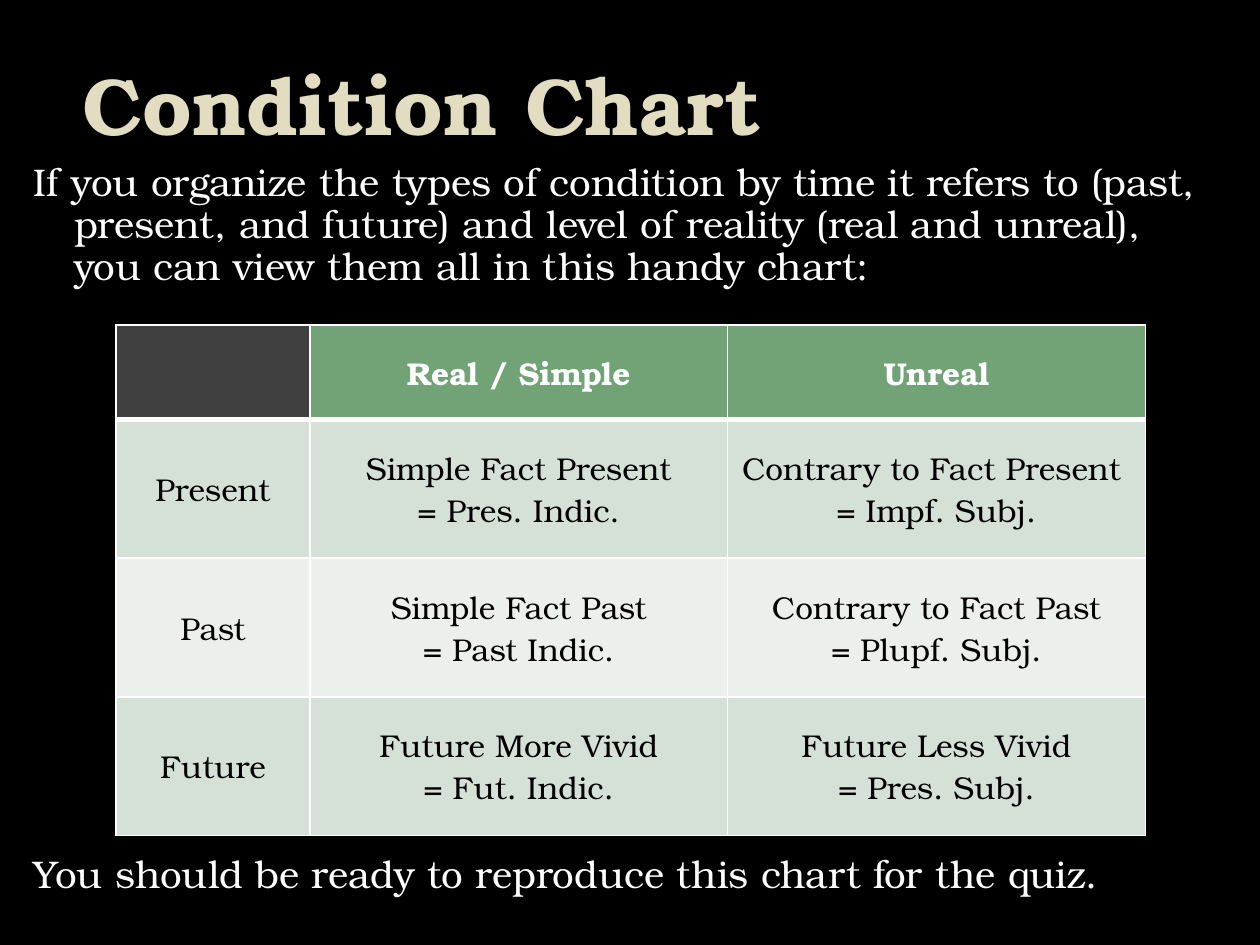
from pptx import Presentation
from pptx.dml.color import RGBColor
from pptx.enum.text import MSO_ANCHOR, PP_ALIGN
from pptx.oxml import parse_xml
from pptx.oxml.ns import nsdecls
from pptx.util import Inches, Pt

FACE = "TeX Gyre Bonum"
TITLE = "Condition Chart"
INTRO = ("If you organize the types of condition by time it refers to (past, "
         "present, and future) and level of reality (real and unreal), "
         "you can view them all in this handy chart:")
CLOSE = "You should be ready to reproduce this chart for the quiz."
ROWS = [
    ["", "Real / Simple", "Unreal"],
    ["Present", "Simple Fact Present\n= Pres. Indic.", "Contrary to Fact Present\u0020\n= Impf. Subj."],
    ["Past", "Simple Fact Past\n= Past Indic.", "Contrary to Fact Past\n= Plupf. Subj."],
    ["Future", "Future More Vivid\n= Fut. Indic.", "Future Less Vivid\n= Pres. Subj."],
]
WIDTHS = [1.54, 3.315, 3.315]
HEIGHTS = [0.75, 1.1, 1.1, 1.1]
BANDS = ["EBF0EC", "D5E0D6"]


def color(code):
    return RGBColor.from_string(code)


def style(para, size, code, bold=False):
    font = para.font
    font.name, font.size, font.bold = FACE, Pt(size), bold
    font.color.rgb = color(code)


def add_text(box, text, size, code, indent, hang=0, bold=False):
    shape = slide.shapes.add_textbox(*map(Inches, box))
    frame = shape.text_frame
    frame.word_wrap = True
    para = frame.paragraphs[0]
    para.text = text
    props = para._p.get_or_add_pPr()
    props.set("marL", str(Inches(indent)))
    props.set("indent", str(Inches(-hang)))
    style(para, size, code, bold)
    return frame


def add_edges(cell, base):
    props = cell._tc.get_or_add_tcPr()
    for side, width in zip("LRTB", (1, 1, 1, base)):
        props.append(parse_xml(
            f'<a:ln{side} {nsdecls("a")} w="{Pt(width)}"><a:solidFill>'
            f'<a:srgbClr val="FFFFFF"/></a:solidFill></a:ln{side}>'))


def fill_cell(cell, text, row, col):
    head = row == 0
    add_edges(cell, 3 if head else 1)
    cell.fill.solid()
    shade = BANDS[row % 2] if row else ("72A376" if col else "404040")
    cell.fill.fore_color.rgb = color(shade)
    cell.vertical_anchor = MSO_ANCHOR.MIDDLE
    cell.text = text
    for para in cell.text_frame.paragraphs:
        para.alignment = PP_ALIGN.CENTER
        style(para, 18, "FFFFFF" if head else "000000", head)


deck = Presentation()
deck.slide_width, deck.slide_height = Inches(10), Inches(7.5)
slide = deck.slides.add_slide(deck.slide_layouts[6])
slide.background.fill.solid()
slide.background.fill.fore_color.rgb = color("000000")

title = add_text((0.5, 0.28, 9, 0.97), TITLE, 46, "E2DCC1", 0.06, bold=True)
title.vertical_anchor = MSO_ANCHOR.BOTTOM
for text, top, height in [(INTRO, 1.25, 1.25), (CLOSE, 6.74, 0.5)]:
    body = add_text((0.17, top, 9.58, height), text, 22, "FFFFFF", 0.32, 0.32)
    body.paragraphs[0].line_spacing = 0.9

table = slide.shapes.add_table(
    len(ROWS), len(WIDTHS), Inches(0.92), Inches(2.58),
    Inches(sum(WIDTHS)), Inches(sum(HEIGHTS))).table
for col, width in zip(table.columns, WIDTHS):
    col.width = Inches(width)
for r, (height, texts) in enumerate(zip(HEIGHTS, ROWS)):
    table.rows[r].height = Inches(height)
    for c, text in enumerate(texts):
        fill_cell(table.cell(r, c), text, r, c)

deck.save("out.pptx")
